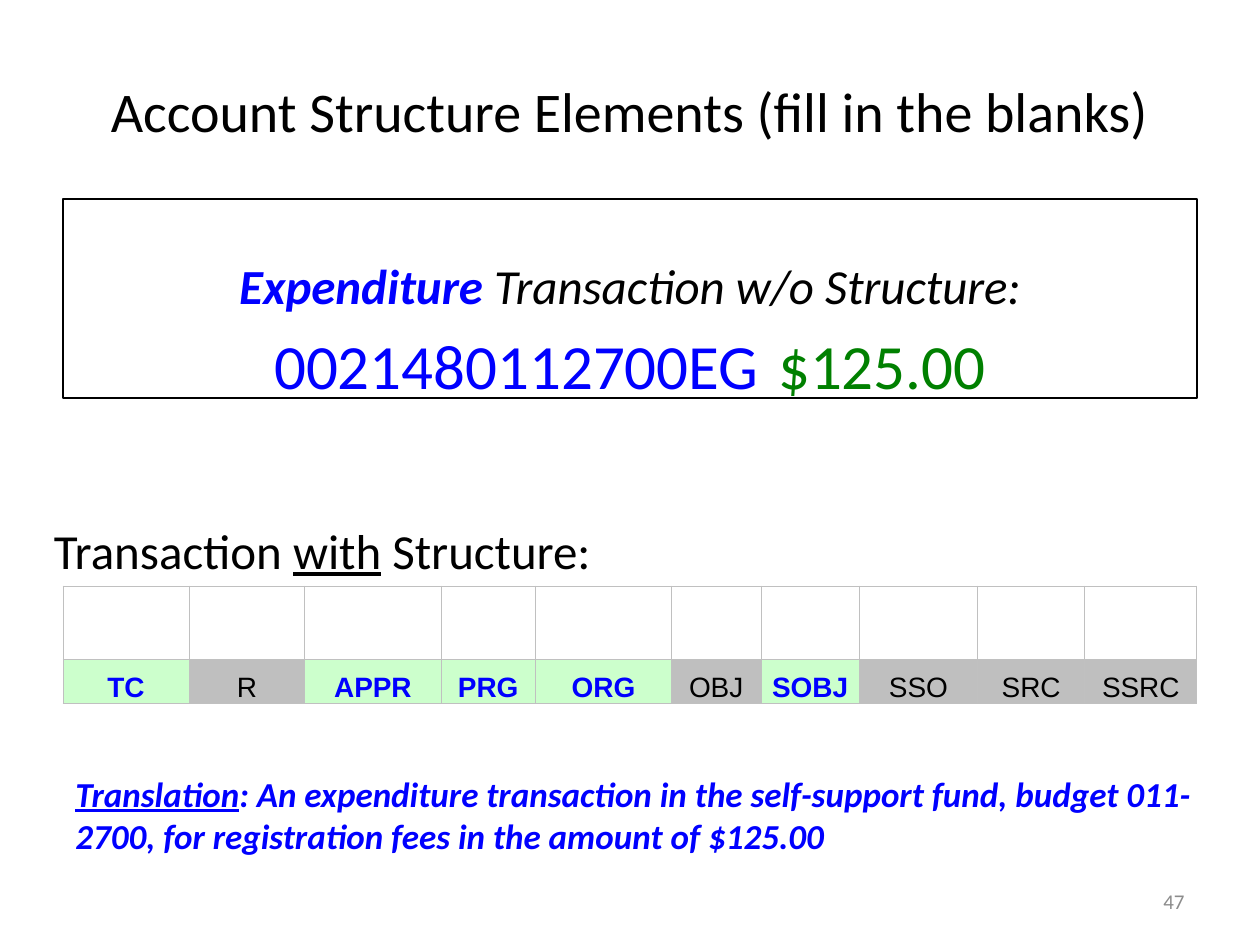
from lxml import etree
from pptx import Presentation
from pptx.dml.color import RGBColor
from pptx.enum.shapes import MSO_SHAPE
from pptx.enum.text import MSO_ANCHOR, PP_ALIGN
from pptx.oxml.ns import qn
from pptx.util import Inches, Pt

RECT = MSO_SHAPE.RECTANGLE
TOP, MIDDLE, BOTTOM = MSO_ANCHOR.TOP, MSO_ANCHOR.MIDDLE, MSO_ANCHOR.BOTTOM
LEFT, CENTER, RIGHT = PP_ALIGN.LEFT, PP_ALIGN.CENTER, PP_ALIGN.RIGHT

COLORS = {
    "black": "000000",
    "blue": "0000FF",
    "green": "008000",
    "number": "8C8C8C",
    "border": "C0C0C0",
    "used": "CCFFCC",
    "unused": "BFBFBF",
}
COLUMNS = [
    ("TC", 1, True), ("R", 0.92, False), ("APPR", 1.08, True),
    ("PRG", 0.75, True), ("ORG", 1.08, True), ("OBJ", 0.71, False),
    ("SOBJ", 0.78, True), ("SSO", 0.94, False), ("SRC", 0.85, False),
    ("SSRC", 0.89, False),
]
ROW_HEIGHTS = [0.58, 0.35]


def rgb(name):
    return RGBColor.from_string(COLORS[name])


def add_run(p, text, size, color="black", bold=False, italic=False,
            underline=False, font="Calibri"):
    r = p.add_run()
    r.text = text
    r.font.name = font
    r.font.size = Pt(size)
    r.font.bold = bold
    r.font.italic = italic
    r.font.underline = underline
    r.font.color.rgb = rgb(color)


def add_title(s, left, top, width, height):
    title = s.shapes.title
    title.left, title.top = Inches(left), Inches(top)
    title.width, title.height = Inches(width), Inches(height)
    tf = title.text_frame
    tf.vertical_anchor = MIDDLE
    p = tf.paragraphs[0]
    p.alignment = CENTER
    add_run(p, "Account Structure Elements (fill in the blanks)", 32)


def add_transaction_box(s, left, top, width, height):
    sp = s.shapes.add_shape(RECT, Inches(left), Inches(top),
                            Inches(width), Inches(height))
    sp.shadow.inherit = False
    sp.fill.background()
    sp.line.color.rgb = rgb("black")
    sp.line.width = Pt(1)
    tf = sp.text_frame
    tf.word_wrap = True
    tf.vertical_anchor = TOP
    tf.margin_top = Inches(0.45)
    p = tf.paragraphs[0]
    p.alignment = CENTER
    add_run(p, "Expenditure", 28, "blue", bold=True, italic=True)
    add_run(p, " Transaction w/o Structure:", 28, italic=True)
    p = tf.add_paragraph()
    p.alignment = CENTER
    p.space_before = Pt(7)
    add_run(p, "0021480112700EG\t", 36, "blue")
    add_run(p, "$125.00", 36, "green")


def add_text(s, left, top, width, height, align=LEFT, anchor=TOP):
    sp = s.shapes.add_textbox(Inches(left), Inches(top),
                              Inches(width), Inches(height))
    tf = sp.text_frame
    tf.word_wrap = True
    tf.vertical_anchor = anchor
    p = tf.paragraphs[0]
    p.alignment = align
    return p


def add_heading(s, left, top, width, height):
    p = add_text(s, left, top, width, height)
    add_run(p, "Transaction ", 28)
    add_run(p, "with", 28, underline=True)
    add_run(p, " Structure:", 28)


def set_borders(cell):
    tcPr = cell._tc.get_or_add_tcPr()
    for side in ("a:lnL", "a:lnR", "a:lnT", "a:lnB"):
        ln = etree.SubElement(tcPr, qn(side), w=str(Pt(0.5)))
        fill = etree.SubElement(ln, qn("a:solidFill"))
        etree.SubElement(fill, qn("a:srgbClr"), val=COLORS["border"])


def add_structure_table(s, left, top, width, height):
    table = s.shapes.add_table(len(ROW_HEIGHTS), len(COLUMNS), Inches(left),
                               Inches(top), Inches(width), Inches(height)).table
    table.first_row = False
    table.horz_banding = False
    for row, row_height in zip(table.rows, ROW_HEIGHTS):
        row.height = Inches(row_height)
    for i, (label, col_width, used) in enumerate(COLUMNS):
        table.columns[i].width = Inches(col_width)
        blank, cell = table.cell(0, i), table.cell(1, i)
        set_borders(blank)
        set_borders(cell)
        blank.fill.background()
        cell.fill.solid()
        cell.fill.fore_color.rgb = rgb("used" if used else "unused")
        cell.vertical_anchor = BOTTOM
        cell.margin_left = cell.margin_right = cell.margin_top = Inches(0.01)
        cell.margin_bottom = 0
        p = cell.text_frame.paragraphs[0]
        p.alignment = CENTER
        add_run(p, label, 16, "blue" if used else "black", bold=used,
                font="Arial")


def add_translation(s, left, top, width, height):
    p = add_text(s, left, top, width, height)
    add_run(p, "Translation", 20, "blue", bold=True, italic=True,
            underline=True)
    add_run(p, ": An expenditure transaction in the self-support fund, "
            "budget 011-2700, for registration fees in the amount of $125.00",
            20, "blue", bold=True, italic=True)


def add_slide_number(s, left, top, width, height):
    p = add_text(s, left, top, width, height, RIGHT, MIDDLE)
    add_run(p, "47", 12, "number")


def main():
    prs = Presentation()
    prs.slide_width, prs.slide_height = Inches(10), Inches(7.5)
    s = prs.slides.add_slide(prs.slide_layouts[5])
    add_title(s, 0.5, 0.5, 9, 0.75)
    add_transaction_box(s, 0.5, 1.58, 9, 1.58)
    add_structure_table(s, 0.5, 4.65, 9, sum(ROW_HEIGHTS))
    add_heading(s, 0.33, 4.08, 5.33, 0.57)
    add_slide_number(s, 7.17, 6.95, 2.33, 0.4)
    add_translation(s, 0.5, 6.08, 9.08, 0.77)
    prs.save("out.pptx")


if __name__ == "__main__":
    main()
